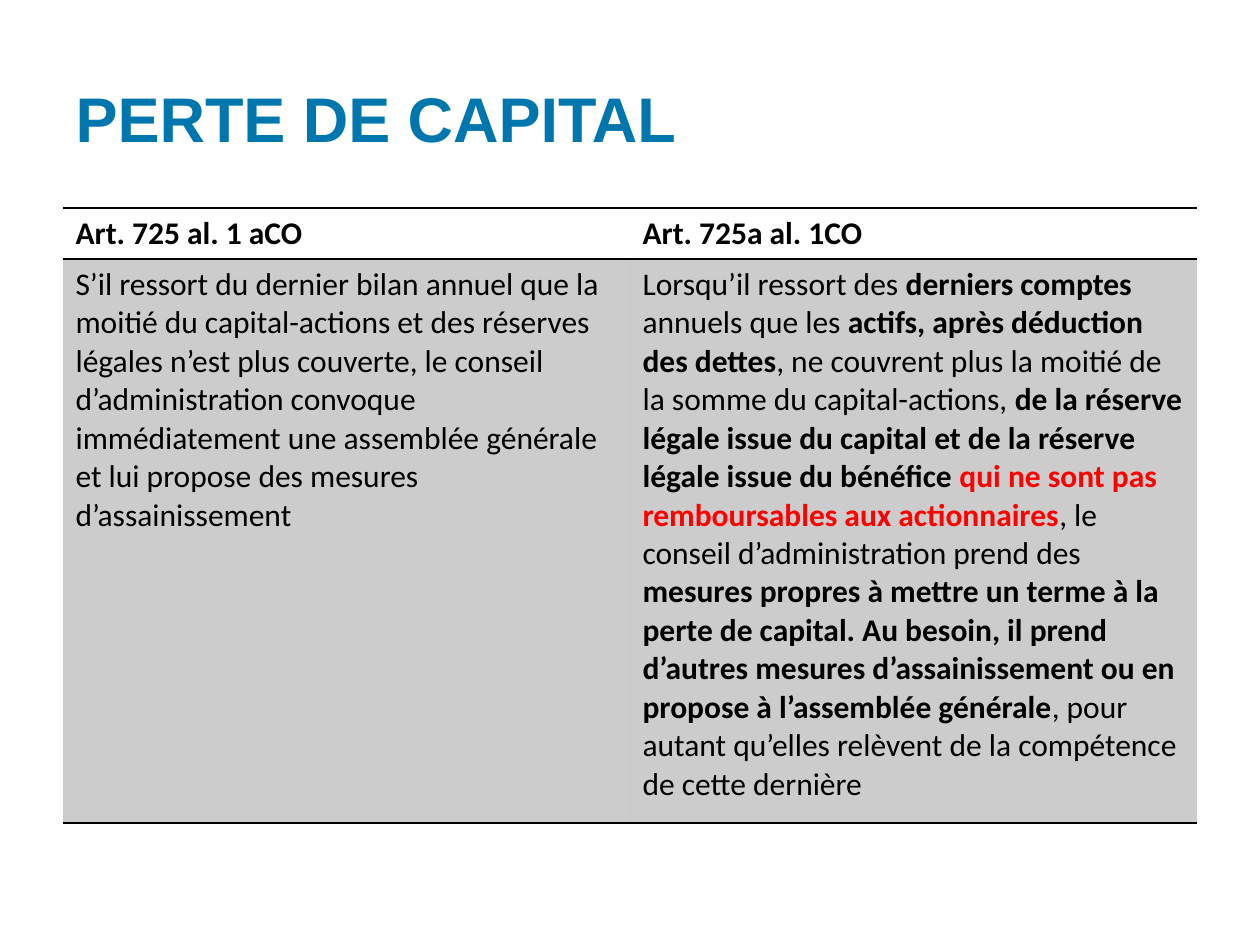
from lxml.etree import SubElement
from pptx import Presentation
from pptx.dml.color import RGBColor
from pptx.enum.text import MSO_ANCHOR as Anchor, PP_ALIGN as Align
from pptx.oxml import parse_xml
from pptx.oxml.ns import nsdecls, qn
from pptx.util import Emu, Pt

BLUE, BLACK, RED = "0076AF", "000000", "FF0000"
NO_STYLE = "{2D5ABB26-0587-4C30-8999-92F81FD0307C}"

OLD_LAW = [
    ("S’il ressort du dernier bilan annuel que la moitié du capital-actions et des réserves "
     "légales n’est plus couverte, le conseil d’administration convoque immédiatement une "
     "assemblée générale et lui propose des mesures d’assainissement", False),
]
NEW_LAW = [
    ("Lorsqu’il ressort des ", False),
    ("derniers comptes ", True),
    ("annuels que les ", False),
    ("actifs, après déduction des dettes", True),
    (", ne couvrent plus la moitié de la somme du capital-actions, ", False),
    ("de la réserve légale issue du capital et de la réserve légale issue du bénéfice ", True),
    ("qui ne sont pas remboursables aux actionnaires", True, RED),
    (", le conseil d’administration prend des ", False),
    ("mesures propres à mettre un terme à la perte de capital. Au besoin, il prend d’autres "
     "mesures d’assainissement ou en propose à l’assemblée générale", True),
    (", pour autant qu’elles relèvent de la compétence de cette dernière", False),
]
ROWS = [
    [[("Art. 725 al. 1 aCO", True)], [("Art. 725a al. 1CO", True)]],
    [OLD_LAW, NEW_LAW],
]


def px(n):
    return Emu(round(n * 914400 / 126))


def rgb(value):
    return RGBColor.from_string(value)


class Deck:
    """Holds the style and the current slide, and adds each kind of element."""

    def __init__(self, width, height):
        self.prs = Presentation()
        self.prs.slide_width, self.prs.slide_height = px(width), px(height)
        self.s = self.prs.slides.add_slide(self.prs.slide_layouts[5])

    def font(self, font, name, size, color):
        font.name, font.size = name, Pt(size)
        font.color.rgb = rgb(color)

    def title(self, text, x, y, w, h):
        sp = self.s.shapes.title
        sp.left, sp.top, sp.width, sp.height = map(px, (x, y, w, h))
        tf = sp.text_frame
        tf.text = text
        tf.vertical_anchor = Anchor.MIDDLE
        p = tf.paragraphs[0]
        p.alignment = Align.LEFT
        self.font(p.font, "Arial", 36, BLUE)
        p.font.bold = True

    def border(self, cell, sides):
        tcPr = cell._tc.get_or_add_tcPr()
        for i, side in enumerate(sides):
            tcPr.insert(i, parse_xml(
                f'<a:ln{side} {nsdecls("a")} w="12700"><a:solidFill>'
                f'<a:srgbClr val="{BLACK}"/></a:solidFill></a:ln{side}>'))

    def tint(self, cell, color, percent):
        cell.fill.solid()
        cell.fill.fore_color.rgb = rgb(color)
        clr = cell._tc.tcPr.find(qn("a:solidFill")).find(qn("a:srgbClr"))
        SubElement(clr, qn("a:alpha")).set("val", str(percent * 1000))

    def runs(self, cell, parts):
        p = cell.text_frame.paragraphs[0]
        self.font(p.font, "Calibri", 18, BLACK)
        for text, bold, *color in parts:
            r = p.add_run()
            r.text = text
            r.font.bold = bold
            if color:
                r.font.color.rgb = rgb(color[0])

    def table(self, rows, x, y, w, heights):
        shape = self.s.shapes.add_table(len(rows), len(rows[0]), px(x), px(y), px(w),
                                        px(sum(heights)))
        table = shape.table
        table.horz_banding = False
        table._tbl.tblPr.find(qn("a:tableStyleId")).text = NO_STYLE
        for i, (row, height) in enumerate(zip(rows, heights)):
            table.rows[i].height = px(height)
            for j, parts in enumerate(row):
                cell = table.cell(i, j)
                self.runs(cell, parts)
                if i == 0:
                    cell.fill.background()
                else:
                    self.tint(cell, BLACK, 20)
                self.border(cell, "B" if i else "TB")

    def save(self):
        self.prs.save("out.pptx")


def main():
    deck = Deck(1260, 945)
    deck.title("PERTE DE CAPITAL", 63, 38, 1134, 158)
    deck.table(ROWS, 63, 208, 1134, [51, 564])
    deck.save()


if __name__ == "__main__":
    main()
